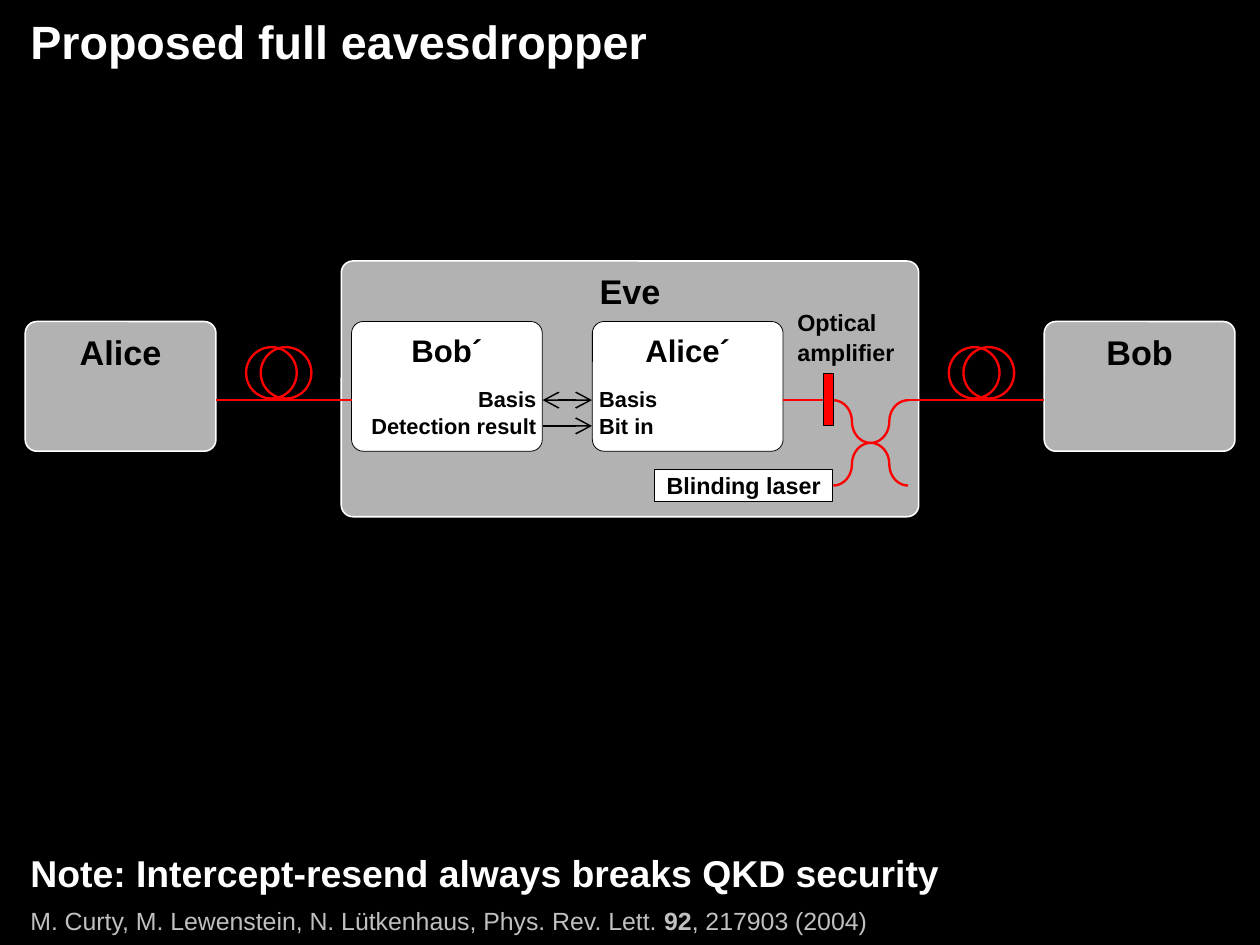
from dataclasses import dataclass
from itertools import product
from math import cos, pi, sin

from lxml.etree import SubElement
from pptx import Presentation
from pptx.dml.color import RGBColor
from pptx.enum.shapes import MSO_CONNECTOR, MSO_SHAPE
from pptx.enum.text import MSO_ANCHOR, PP_ALIGN
from pptx.oxml.ns import qn
from pptx.util import Pt


@dataclass
class Theme:
    font: str = "Arial"
    black: str = "000000"
    white: str = "FFFFFF"
    gray: str = "B2B2B2"
    pale: str = "C0C0C0"
    red: str = "FF0000"
    title: float = 30
    note: float = 24
    party: float = 22
    clone: float = 20
    cite: float = 16
    label: float = 15
    port: float = 14
    hair: float = 0.5
    thin: float = 1
    fiber: float = 1.5


def write(frame, text, size, color, font, bold=True, align=PP_ALIGN.LEFT,
          anchor=MSO_ANCHOR.TOP, inset=0, gap=0, lead=None):
    """Fill a frame; each line is a paragraph, and |bars| flip the weight."""
    frame.word_wrap = True
    frame.vertical_anchor = anchor
    frame.margin_left = frame.margin_right = 0
    frame.margin_top = frame.margin_bottom = Pt(inset)
    for row, line in enumerate(text.split("\n")):
        para = frame.paragraphs[0] if row == 0 else frame.add_paragraph()
        para.alignment = align
        if row:
            para.space_before = Pt(gap)
        if lead:
            para.line_spacing = lead
        for turn, words in enumerate(line.split("|")):
            run = para.add_run()
            run.text = words
            run.font.name = font
            run.font.size = Pt(size)
            run.font.bold = bold != (turn % 2 == 1)
            run.font.color.rgb = RGBColor.from_string(color)


class Board:
    def __init__(self, slide, theme):
        self.slide, self.theme = slide, theme
        self.shapes = slide.shapes
        fill = slide.background.fill
        fill.solid()
        fill.fore_color.rgb = RGBColor.from_string(theme.black)

    def paint(self, shape, fill, line, width):
        shape.shadow.inherit = False
        if fill:
            shape.fill.solid()
            shape.fill.fore_color.rgb = RGBColor.from_string(fill)
        else:
            shape.fill.background()
        shape.line.color.rgb = RGBColor.from_string(line)
        shape.line.width = Pt(width)

    def text(self, x, y, w, h, text, size, color, **style):
        box = self.shapes.add_textbox(Pt(x), Pt(y), Pt(w), Pt(h))
        write(box.text_frame, text, size, color, self.theme.font, **style)

    def shape(self, kind, x, y, w, h, fill, line, width):
        shape = self.shapes.add_shape(kind, Pt(x), Pt(y), Pt(w), Pt(h))
        self.paint(shape, fill, line, width)
        return shape

    def box(self, x, y, w, h, name, size, fill, line, width, radius=7.5):
        """Rounded box with its name at the top."""
        box = self.shape(MSO_SHAPE.ROUNDED_RECTANGLE, x, y, w, h,
                         fill, line, width)
        box.adjustments[0] = radius / min(w, h)
        write(box.text_frame, name, size, self.theme.black, self.theme.font,
              align=PP_ALIGN.CENTER, inset=4)

    def line(self, x1, x2, y, color, width, ends=()):
        line = self.shapes.add_connector(
            MSO_CONNECTOR.STRAIGHT, Pt(x1), Pt(y), Pt(x2), Pt(y))
        line.line.color.rgb = RGBColor.from_string(color)
        line.line.width = Pt(width)
        props = line.element.spPr
        for end in ends:
            SubElement(props.find(qn("a:ln")), qn("a:" + end),
                       type="arrow", w="lg", len="lg")
        SubElement(props, qn("a:effectLst"))

    def coil(self, x, y):
        """Two overlapping loops of fiber."""
        for step in (9.4, 0):
            self.shape(MSO_SHAPE.OVAL, x + step, y, 32.6, 33, None,
                       self.theme.red, self.theme.fiber)

    def arm(self, x, y, dx, dy, steps=10):
        """S-curve of two quarter arcs, running outward from (x, y)."""
        turns = [pi / 2 * i / steps for i in range(steps + 1)]
        first = [(sin(t), 1 - cos(t)) for t in turns]
        second = [(2 - a, 2 - b) for a, b in reversed(first)]
        dots = [(Pt(x + dx * a), Pt(y + dy * b))
                for a, b in first + second[1:]]
        curve = self.shapes.build_freeform(*dots[0], scale=1.0)
        curve.add_line_segments(dots[1:], close=False)
        self.paint(curve.convert_to_shape(), None, self.theme.red,
                   self.theme.fiber)


def main():
    deck = Presentation()
    deck.slide_width, deck.slide_height = Pt(810), Pt(607.5)
    look = Theme()
    board = Board(deck.slides.add_slide(deck.slide_layouts[6]), look)
    left, wide = 19.5, 790

    board.text(left, 5, wide, 73, "Proposed full eavesdropper",
               look.title, look.white, inset=3.6)

    # Parties
    top, width, height = 206.7, 122.6, 83.4
    board.box(219.4, 167.8, 371.2, 164.4, "Eve", look.party,
              look.gray, look.white, look.thin)
    for x, name in ((16.2, "Alice"), (671.3, "Bob")):
        board.box(x, top, width, height, name, look.party,
                  look.gray, look.white, look.thin)
    for x, name in ((226, "Bob´"), (380.8, "Alice´")):
        board.box(x, top, width, height, name, look.clone,
                  look.white, look.black, look.hair)

    # Fiber and coupler
    level = 257.2
    for x1, x2 in ((138.8, 226), (503.4, 535.7), (583.5, 671.3)):
        board.line(x1, x2, level, look.red, look.fiber)
    for x in (158.2, 610):
        board.coil(x, 223.2)
    for dx, dy in product((-12, 12), (-13.7, 13.7)):
        board.arm(559.7, 284.7, dx, dy)
    board.shape(MSO_SHAPE.RECTANGLE, 529.2, 239.9, 6.3, 33.6,
                look.red, look.black, look.hair)
    board.text(512.6, 198, 75, 37, "Optical\namplifier",
               look.label, look.black, gap=1.5)
    laser = board.shape(MSO_SHAPE.RECTANGLE, 420.9, 301.8, 114.4, 20.6,
                        look.white, look.black, look.hair)
    write(laser.text_frame, "Blinding laser", look.label, look.black,
          look.font, align=PP_ALIGN.CENTER, anchor=MSO_ANCHOR.MIDDLE)

    # Signals between the two clones
    for y, ends in ((level, ("headEnd", "tailEnd")), (273.8, ("tailEnd",))):
        board.line(348.8, 380.6, y, look.black, look.thin, ends)
    for x, ports, align in (
            (229, "Basis\nDetection result", PP_ALIGN.RIGHT),
            (385.2, "Basis\nBit in", PP_ALIGN.LEFT)):
        board.text(x, 248, 115.8, 34, ports, look.port, look.black,
                   align=align, gap=0.6)

    board.text(left, 539.3, wide, 68,
               "Note: Intercept-resend always breaks QKD security",
               look.note, look.white, inset=4.3, lead=1.1)
    board.text(left, 574.6, wide, 30.2,
               "M. Curty, M. Lewenstein, N. Lütkenhaus, "
               "Phys. Rev. Lett. |92|, 217903 (2004)",
               look.cite, look.pale, bold=False,
               anchor=MSO_ANCHOR.BOTTOM, inset=3.6)
    deck.save("out.pptx")


if __name__ == "__main__":
    main()
